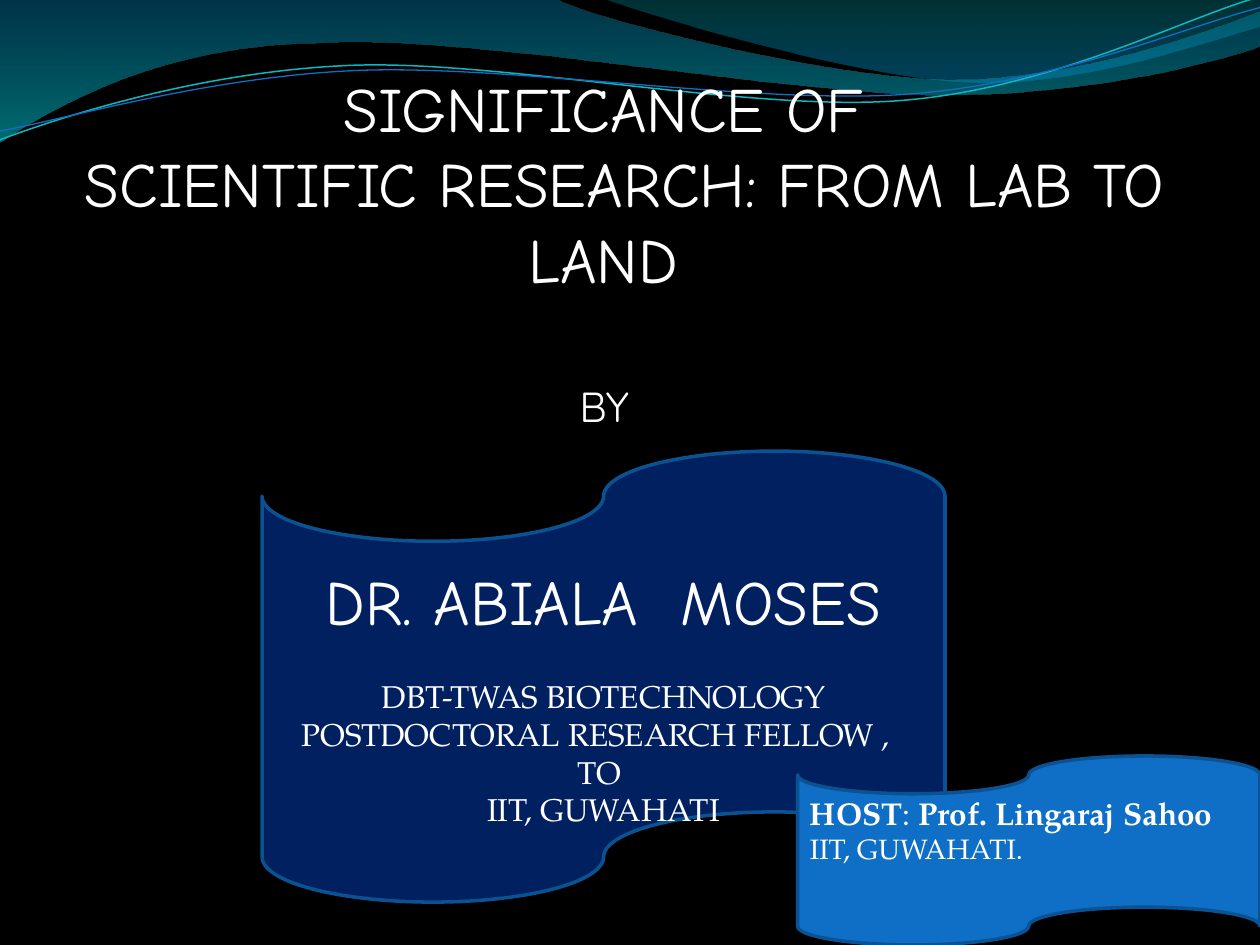
"""Build the title slide of a talk on scientific research."""
from dataclasses import dataclass

from lxml import etree
from pptx import Presentation
from pptx import util as u
from pptx.dml.color import RGBColor
from pptx.enum import shapes, text
from pptx.oxml.ns import qn


@dataclass(frozen=True)
class Theme:
    black: str = "000000"
    white: str = "FFFFFF"
    navy: str = "002060"
    blue: str = "0F6FC6"
    edge: str = "0B5292"
    teal: str = "0AB8BF"
    hand: str = "Comic Neue"
    sans: str = "Quicksand"
    serif: str = "TeX Gyre Pagella"
    title: int = 36
    by: int = 24
    body: int = 18
    small: int = 16


T = Theme()
LEFT, CENTER = text.PP_ALIGN.LEFT, text.PP_ALIGN.CENTER

# Outlines: a start point, then (x, y) for a line or six numbers for a curve.
WAVES = [
    {"path": [(0, -0.01), (4.4, -0.01), (4.76, 0.17, 6.64, 0.63, 7.58, 0.63),
              (8.53, 0.63, 9.58, 0.26, 10, 0.09), (10.01, 0.36),
              (9.83, 0.44, 8.7, 0.76, 7.46, 0.75),
              (6.22, 0.75, 3.82, 0.28, 2.57, 0.34),
              (1.29, 0.35, 0.46, 0.83, -0.01, 1.13), (0, -0.01)],
     "stops": [(0, "0074A1", 45), (1, "00C6CF", 55)]},
    {"path": [(4.79, -0.01), (5.09, 0.11, 6.82, 0.62, 7.69, 0.65),
              (8.56, 0.69, 9.61, 0.32, 10, 0.21), (10, 0), (4.79, -0.01)],
     "stops": [(0, "00A1A9", 30), (0.8, "008BBF", 45)]},
    {"path": [(0, 1.11), (0.48, 0.93, 1.58, 0.57, 2.77, 0.52),
              (3.95, 0.47, 5.93, 0.89, 7.13, 0.8),
              (8.33, 0.71, 9.38, 0.15, 9.98, -0.02)],
     "line": (T.teal, 0.85)},
    {"path": [(0, 1.04), (0.47, 0.96, 1.64, 0.61, 2.83, 0.56),
              (4.03, 0.51, 5.97, 0.83, 7.17, 0.75),
              (8.36, 0.67, 9.41, 0.21, 10, 0.06)],
     "line": (T.blue, 0.75)},
]

# Paragraphs: runs of (text, bold), font, size, alignment, space before.
TITLE = [
    ([("SIGNIFICANCE OF  ", False)], T.hand, T.title, CENTER, 0),
    ([("SCIENTIFIC RESEARCH: FROM LAB TO LAND  ", False)],
     T.hand, T.title, CENTER, 0),
]
BY = [([("BY", False)], T.sans, T.by, LEFT, 0)]
SPEAKER = [
    ([("DR. ABIALA  MOSES", False)], T.hand, T.title, CENTER, 0),
    ([("DBT-TWAS BIOTECHNOLOGY POSTDOCTORAL RESEARCH FELLOW ,  ", False)],
     T.serif, T.body, CENTER, 22),
    ([("TO ", False)], T.serif, T.body, CENTER, 0),
    ([("IIT, GUWAHATI", False)], T.serif, T.body, CENTER, 0),
]
HOST = [
    ([("HOST", True), (": ", False), ("Prof. Lingaraj Sahoo", True)],
     T.serif, T.body, LEFT, 0),
    ([("IIT, GUWAHATI.", False)], T.serif, T.small, LEFT, 0),
]


def rgb(value):
    return RGBColor.from_string(value)


def inches(box):
    return [u.Inches(v) for v in box]


def add_outline(s, path, closed):
    """Draw all points as a polygon, then turn each group of three into a curve."""
    points = [inches(seg[i:i + 2]) for seg in path for i in range(0, len(seg), 2)]
    builder = s.shapes.build_freeform(*points[0])
    builder.add_line_segments(points[1:], close=closed)
    sp = builder.convert_to_shape()
    lines = iter(list(sp._element.iter(qn("a:lnTo"))))
    for seg in path[1:]:
        first = next(lines)
        if len(seg) == 6:
            first.tag = qn("a:cubicBezTo")
            for _ in range(2):
                extra = next(lines)
                first.append(extra[0])
                extra.getparent().remove(extra)
    return sp


def add_wave(s, path, stops=None, line=None):
    sp = add_outline(s, path, bool(stops))
    sp.shadow.inherit = False
    if line:
        sp.fill.background()
        sp.line.color.rgb = rgb(line[0])
        sp.line.width = u.Pt(line[1])
        return
    sp.line.fill.background()
    sp.fill.gradient()
    sp.fill.gradient_angle = 270
    for stop, (position, color, _) in zip(sp.fill.gradient_stops, stops):
        stop.position = position
        stop.color.rgb = rgb(color)
    colors = sp._element.spPr.iter(qn("a:srgbClr"))
    for clr, (_, _, opacity) in zip(colors, stops):
        etree.SubElement(clr, qn("a:alpha")).set("val", str(opacity * 1000))


def write(sp, paragraphs):
    tf = sp.text_frame
    tf.word_wrap = True
    for i, (runs, font, size, align, before) in enumerate(paragraphs):
        p = tf.add_paragraph() if i else tf.paragraphs[0]
        p.alignment = align
        if before:
            p.space_before = u.Pt(before)
        for words, bold in runs:
            r = p.add_run()
            r.text = words
            r.font.name, r.font.size, r.font.bold = font, u.Pt(size), bold
            r.font.color.rgb = rgb(T.white)
    return tf


def add_text(s, box, paragraphs):
    return write(s.shapes.add_textbox(*inches(box)), paragraphs)


def add_tape(s, box, fill):
    sp = s.shapes.add_shape(shapes.MSO_SHAPE.FLOWCHART_PUNCHED_TAPE, *inches(box))
    sp.shadow.inherit = False
    sp.fill.solid()
    sp.fill.fore_color.rgb = rgb(fill)
    sp.line.color.rgb = rgb(T.edge)
    sp.line.width = u.Pt(2)
    return sp


def main():
    prs = Presentation()
    prs.slide_width, prs.slide_height = inches((10, 7.5))
    s = prs.slides.add_slide(prs.slide_layouts[6])
    s.background.fill.solid()
    s.background.fill.fore_color.rgb = rgb(T.black)

    for wave in WAVES:
        add_wave(s, **wave)

    add_text(s, (0.33, 0.5, 9.25, 2.73), TITLE)
    add_text(s, (4.5, 2.97, 1.17, 0.5), BY)

    tf = write(add_tape(s, (2.08, 3.58, 5.42, 3.58), T.navy), SPEAKER)
    tf.vertical_anchor = text.MSO_ANCHOR.MIDDLE
    tf.margin_top, tf.margin_bottom = inches((0.3, 0))

    add_tape(s, (6.33, 6, 3.67, 1.5), T.blue)
    add_text(s, (6.33, 6.25, 3.5, 0.67), HOST)
    prs.save("out.pptx")


if __name__ == "__main__":
    main()
